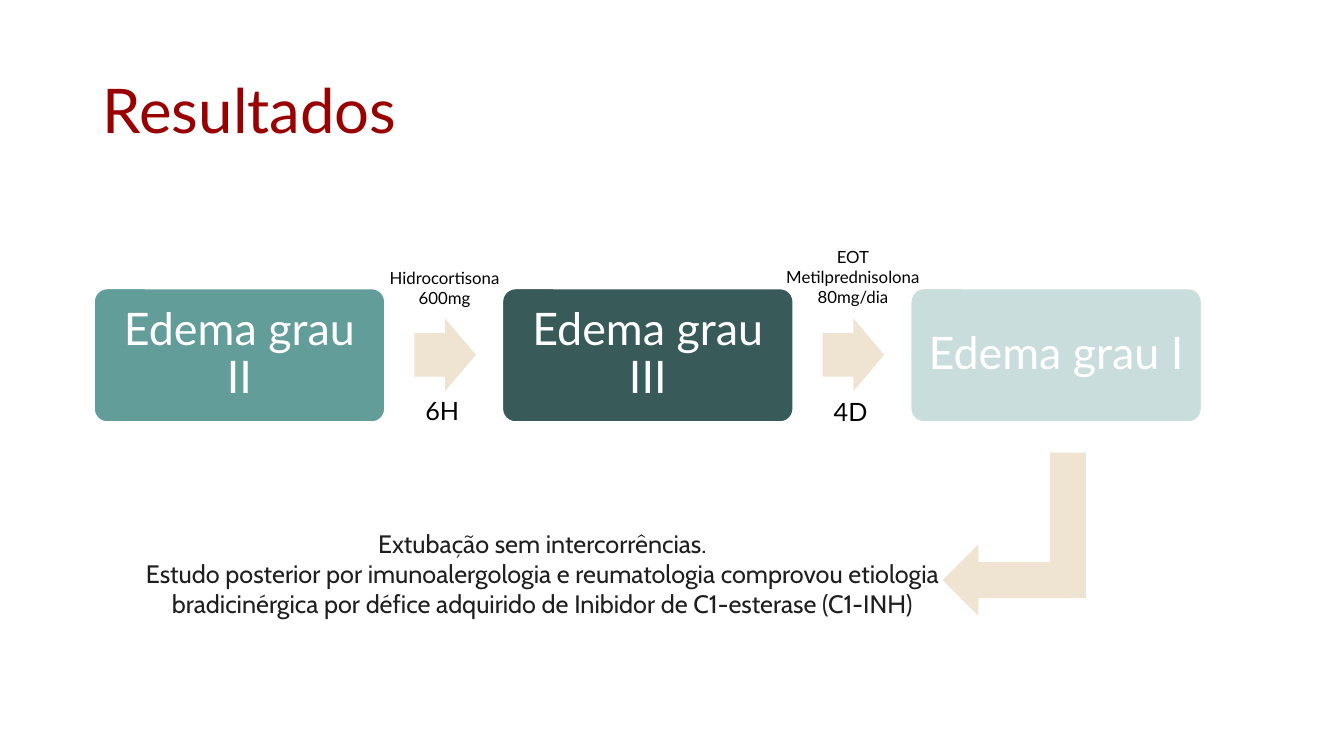
from dataclasses import dataclass

import pptx
import pptx.dml.color
import pptx.enum.shapes
import pptx.enum.text
import pptx.util

RGBColor = pptx.dml.color.RGBColor
Shape = pptx.enum.shapes.MSO_SHAPE
Align = pptx.enum.text.PP_ALIGN
Anchor = pptx.enum.text.MSO_ANCHOR
AutoSize = pptx.enum.text.MSO_AUTO_SIZE

RED = RGBColor(0x99, 0x00, 0x00)
TEAL = RGBColor(0x63, 0x9D, 0x9A)
DARK_TEAL = RGBColor(0x38, 0x5A, 0x58)
PALE_TEAL = RGBColor(0xC9, 0xDD, 0xDC)
SAND = RGBColor(0xEE, 0xE4, 0xD1)
WHITE = RGBColor(0xFF, 0xFF, 0xFF)
BLACK = RGBColor(0x00, 0x00, 0x00)
INK = RGBColor(0x1F, 0x1F, 0x1F)

EMU_PER_PX = 9144  # 100 px to the inch
STAGE_LEFT, STAGE_STEP = 93, 405
ARROW_LEFT = 411


def px(length: int) -> pptx.util.Emu:
    return pptx.util.Emu(length * EMU_PER_PX)


@dataclass(frozen=True)
class Box:
    left: int
    top: int
    width: int
    height: int

    def emu(self) -> tuple:
        return tuple(px(n) for n in (self.left, self.top, self.width, self.height))


@dataclass(frozen=True)
class Stage:
    text: str
    color: RGBColor


@dataclass(frozen=True)
class Note:
    box: Box
    lines: tuple
    size: int
    color: RGBColor = BLACK
    font: str = "Lato"
    align: Align = Align.CENTER


STAGES = (
    Stage("Edema grau II", TEAL),
    Stage("Edema grau III", DARK_TEAL),
    Stage("Edema grau I", PALE_TEAL),
)
NOTES = (
    Note(Box(412, 387, 58, 40), ("6H",), 18, align=Align.LEFT),
    Note(Box(333, 261, 216, 50), ("Hidrocortisona", "600mg"), 12),
    Note(Box(738, 240, 216, 71), ("EOT", "Metilprednisolona 80mg/dia"), 12),
    Note(Box(817, 388, 58, 40), ("4D",), 18, align=Align.LEFT),
    Note(
        Box(131, 519, 814, 101),
        (
            "Extubação sem intercorrências.",
            "Estudo posterior por imunoalergologia e reumatologia comprovou etiologia "
            "bradicinérgica por défice adquirido de Inibidor de C1-esterase (C1-INH)",
        ),
        18, INK, "Cabin",
    ),
)


def apply(target, formats: dict) -> None:
    for name, value in formats.items():
        setattr(target, name, value)


def write(frame, lines: tuple, size: int, color: RGBColor, font: str = "Lato",
          align: Align = Align.CENTER, spacing: float = 1.0) -> None:
    frame.text = "\n".join(lines)
    for paragraph in frame.paragraphs:
        apply(paragraph, {"alignment": align, "line_spacing": spacing})
        apply(paragraph.font, {"name": font, "size": pptx.util.Pt(size)})
        paragraph.font.color.rgb = color


def add_filled(slide, kind: Shape, box: Box, color: RGBColor, adjustments: tuple = ()):
    shape = slide.shapes.add_shape(kind, *box.emu())
    shape.shadow.inherit = False
    shape.fill.solid()
    shape.fill.fore_color.rgb = color
    shape.line.fill.background()
    for i, value in enumerate(adjustments):
        shape.adjustments[i] = value
    return shape


def add_stage(slide, stage: Stage, left: int) -> None:
    card = add_filled(slide, Shape.ROUNDED_RECTANGLE, Box(left, 286, 289, 133),
                      stage.color, (0.1,))
    card.line.color.rgb = WHITE
    card.line.width = pptx.util.Pt(1.5)
    inset = px(13)
    apply(card.text_frame, {
        "word_wrap": True, "vertical_anchor": Anchor.MIDDLE,
        "margin_left": inset, "margin_right": inset,
        "margin_top": inset, "margin_bottom": inset,
    })
    write(card.text_frame, (stage.text,), 32, WHITE, spacing=0.9)


def add_note(slide, note: Note) -> None:
    frame = slide.shapes.add_textbox(*note.box.emu()).text_frame
    apply(frame, {"word_wrap": True, "auto_size": AutoSize.SHAPE_TO_FIT_TEXT})
    write(frame, note.lines, note.size, note.color, note.font, note.align)


def main() -> None:
    presentation = pptx.Presentation()
    apply(presentation, {"slide_width": px(1333), "slide_height": px(750)})
    slide = presentation.slides.add_slide(presentation.slide_layouts[5])

    # Title
    title = slide.shapes.title
    left, top, width, height = Box(92, 40, 1150, 145).emu()
    apply(title, {"left": left, "top": top, "width": width, "height": height})
    apply(title.text_frame, {"vertical_anchor": Anchor.MIDDLE, "auto_size": AutoSize.NONE})
    write(title.text_frame, ("Resultados",), 44, RED, align=Align.LEFT, spacing=0.9)

    # Stages of the oedema, with an arrow between neighbours
    for i, stage in enumerate(STAGES):
        offset = i * STAGE_STEP
        add_stage(slide, stage, STAGE_LEFT + offset)
        if i < len(STAGES) - 1:
            add_filled(slide, Shape.RIGHT_ARROW, Box(ARROW_LEFT + offset, 316, 61, 72),
                       SAND, (0.6, 0.5))

    # Treatments, durations and outcome
    for note in NOTES:
        add_note(slide, note)

    # Bent arrow from the last stage down to the outcome
    outcome_arrow = add_filled(slide, Shape.BENT_UP_ARROW, Box(925, 459, 162, 142), SAND)
    outcome_arrow.rotation = 90
    outcome_arrow._element.spPr.xfrm.set("flipV", "1")

    presentation.save("out.pptx")


if __name__ == "__main__":
    main()
